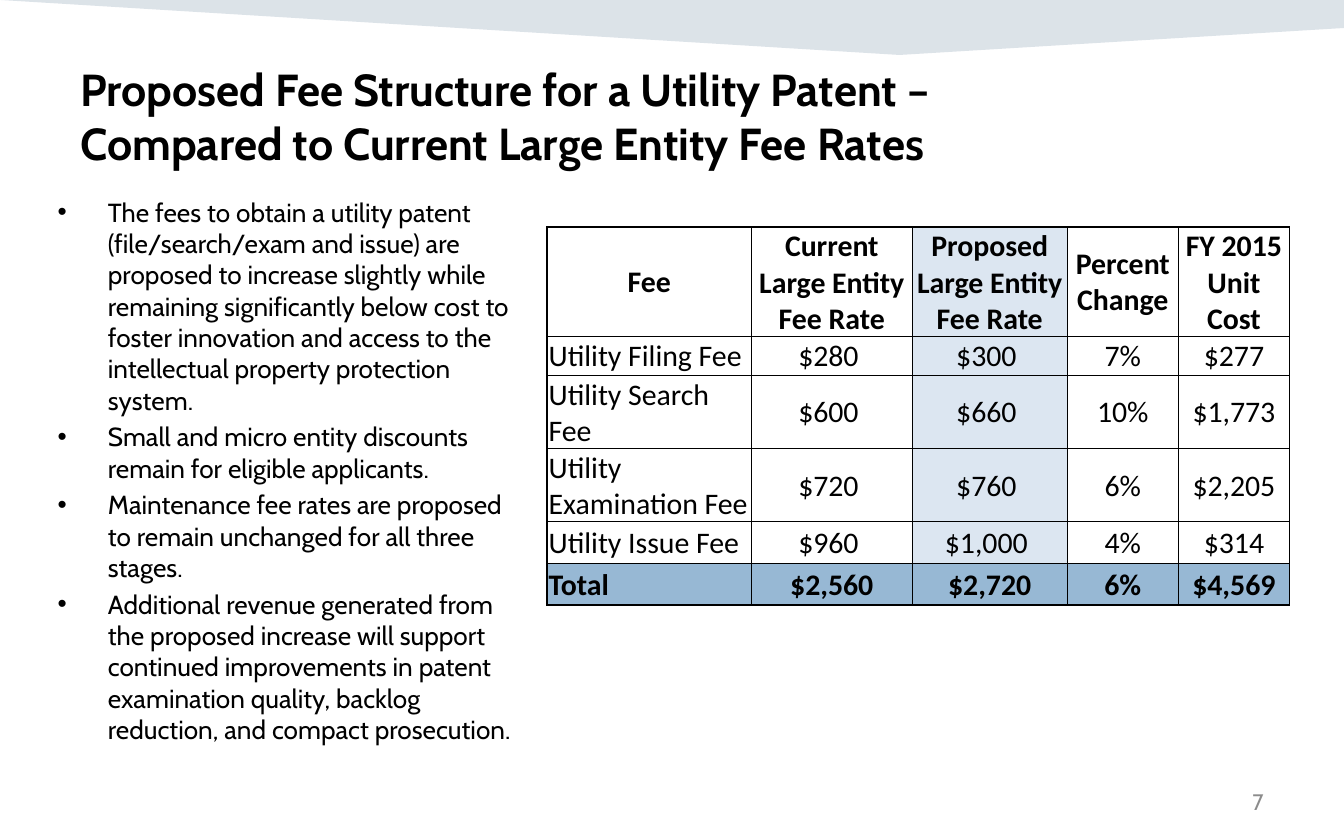
from lxml import etree
from pptx import Presentation
from pptx.dml.color import RGBColor
from pptx.enum.text import MSO_ANCHOR, PP_ALIGN
from pptx.oxml.ns import qn
from pptx.util import Cm, Pt

LEFT, CENTER, RIGHT = PP_ALIGN.LEFT, PP_ALIGN.CENTER, PP_ALIGN.RIGHT
TOP, MIDDLE = MSO_ANCHOR.TOP, MSO_ANCHOR.MIDDLE

COLORS = {
    "text": "000000",
    "number": "8C8C8C",
    "banner": "164469",
    "plain": "FFFFFF",
    "proposed": "DCE6F1",
    "total": "97B8D4",
}

TITLE = [
    "Proposed Fee Structure for a Utility Patent –",
    "Compared to Current Large Entity Fee Rates",
]
POINTS = [
    "The fees to obtain a utility patent (file/search/exam and issue) are proposed "
    "to increase slightly while remaining significantly below cost to foster "
    "innovation and access to the intellectual property protection system.",
    "Small and micro entity discounts remain for eligible applicants.",
    "Maintenance fee rates are proposed to remain unchanged for all three stages.",
    "Additional revenue generated from the proposed increase will support continued "
    "improvements in patent examination quality, backlog reduction, and compact "
    "prosecution.",
]
FEES = [
    ["Fee", "Current Large Entity Fee Rate", "Proposed Large Entity Fee Rate",
     "Percent Change", "FY 2015 Unit Cost"],
    ["Utility Filing Fee", "$280 ", "$300 ", "7%", "$277"],
    ["Utility Search Fee", "$600 ", "$660 ", "10%", "$1,773"],
    ["Utility Examination Fee", "$720 ", "$760 ", "6%", "$2,205"],
    ["Utility Issue Fee", "$960 ", "$1,000 ", "4%", "$314"],
    ["Total", "$2,560", "$2,720", "6%", "$4,569"],
]
COL_WIDTHS = [3.86, 3.04, 2.93, 2.1, 2.1]
ROW_HEIGHTS = [1.5, 0.74, 0.74, 0.74, 0.79, 0.79]
PROPOSED_COL = 2
BANNER = [(0, 0), (25.4, 0), (25.4, 0.53), (17, 1.04)]


class FeeSlide:
    text_font = "Cabin"
    table_font = "Calibri"

    def __init__(self, prs):
        self.s = prs.slides.add_slide(prs.slide_layouts[6])

    def color(self, name):
        return RGBColor.from_string(COLORS[name])

    def run(self, p, text, size, font, color="text", bold=False):
        r = p.add_run()
        r.text = text
        r.font.size = Pt(size)
        r.font.name = font
        r.font.bold = bold
        r.font.color.rgb = self.color(color)

    def banner(self, points, opacity):
        pts = [(Cm(x), Cm(y)) for x, y in points]
        fb = self.s.shapes.build_freeform(*pts[0])
        fb.add_line_segments(pts[1:], close=True)
        sp = fb.convert_to_shape()
        sp.shadow.inherit = False
        sp.line.fill.background()
        sp.fill.solid()
        sp.fill.fore_color.rgb = self.color("banner")
        clr = sp.fill._xPr.find(".//" + qn("a:srgbClr"))
        etree.SubElement(clr, qn("a:alpha"), val=str(opacity * 1000))

    def text_box(self, box, anchor=TOP):
        tf = self.s.shapes.add_textbox(*map(Cm, box)).text_frame
        tf.word_wrap = True
        tf.vertical_anchor = anchor
        return tf

    def title(self, lines, box):
        p = self.text_box(box).paragraphs[0]
        for i, line in enumerate(lines):
            if i:
                p.add_line_break()
            self.run(p, line, 24, self.text_font, bold=True)

    def page_number(self, number, box):
        p = self.text_box(box, MIDDLE).paragraphs[0]
        p.alignment = RIGHT
        self.run(p, number, 12, self.text_font, "number")

    def bullets(self, items, box):
        tf = self.text_box(box)
        for i, item in enumerate(items):
            p = tf.add_paragraph() if i else tf.paragraphs[0]
            p.space_before = Pt(2.8)
            pPr = p._p.get_or_add_pPr()
            pPr.set("marL", str(Cm(0.95)))
            pPr.set("indent", str(-Cm(0.95)))
            etree.SubElement(pPr, qn("a:buFont"), typeface="Arial")
            etree.SubElement(pPr, qn("a:buChar"), char="•")
            self.run(p, item, 14, self.text_font)

    def borders(self, cell, outer):
        tcPr = cell._tc.get_or_add_tcPr()
        for side in "LRTB":
            width = Pt(1 if side in outer else 0.5)
            ln = etree.SubElement(tcPr, qn("a:ln" + side), w=str(width))
            fill = etree.SubElement(ln, qn("a:solidFill"))
            etree.SubElement(fill, qn("a:srgbClr"), val=COLORS["text"])

    def cell(self, cell, text, fill, align, bold, outer):
        cell.margin_left = cell.margin_right = cell.margin_top = Cm(0.03)
        cell.margin_bottom = 0
        cell.vertical_anchor = MIDDLE
        self.borders(cell, outer)
        cell.fill.solid()
        cell.fill.fore_color.rgb = self.color(fill)
        p = cell.text_frame.paragraphs[0]
        p.alignment = align
        self.run(p, text, 16, self.table_font, bold=bold)

    def table(self, rows, left, top, height):
        last_row, last_col = len(rows) - 1, len(rows[0]) - 1
        frame = self.s.shapes.add_table(
            len(rows), len(rows[0]), Cm(left), Cm(top), Cm(sum(COL_WIDTHS)), Cm(height))
        table = frame.table
        table.first_row = table.horz_banding = False
        for col, width in zip(table.columns, COL_WIDTHS):
            col.width = Cm(width)
        for row, row_height in zip(table.rows, ROW_HEIGHTS):
            row.height = Cm(row_height)
        frame.height = Cm(height)
        for i, row in enumerate(rows):
            for j, text in enumerate(row):
                fill = "proposed" if j == PROPOSED_COL else "plain"
                edges = {"L": j == 0, "R": j == last_col, "T": i == 0, "B": i == last_row}
                self.cell(
                    table.cell(i, j), text,
                    fill="total" if i == last_row else fill,
                    align=LEFT if i and not j else CENTER,
                    bold=i in (0, last_row),
                    outer=[side for side, on in edges.items() if on])


def main():
    prs = Presentation()
    prs.slide_width, prs.slide_height = Cm(25.4), Cm(15.88)
    slide = FeeSlide(prs)
    slide.banner(BANNER, opacity=15)
    slide.title(TITLE, (1.27, 1.04, 22.86, 2.54))
    slide.page_number("7", (18.21, 14.73, 5.92, 0.84))
    slide.bullets(POINTS, (0.84, 3.58, 9.32, 11.2))
    slide.table(FEES, left=10.34, top=4.29, height=7.14)
    prs.save("out.pptx")


if __name__ == "__main__":
    main()
